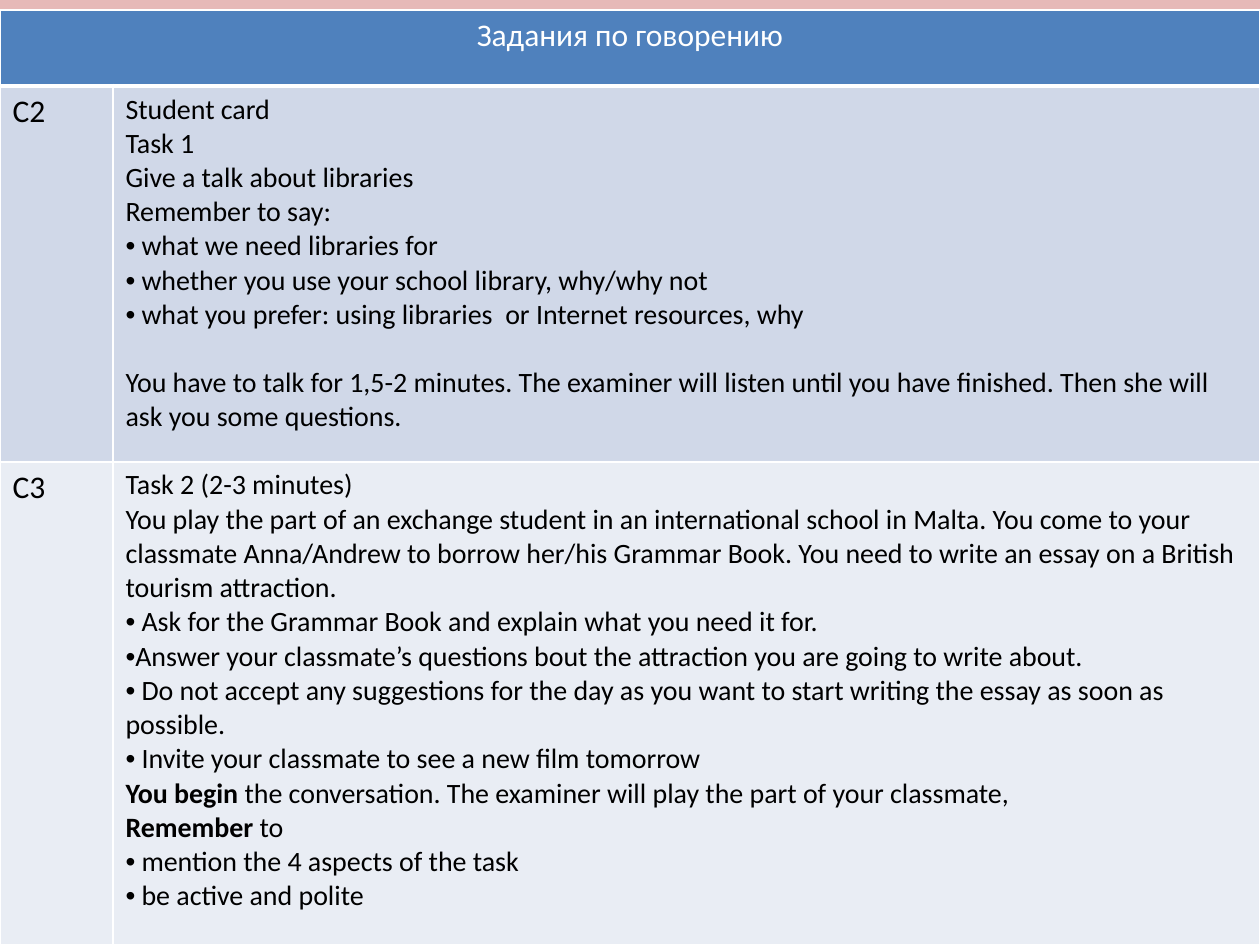
from dataclasses import dataclass

from lxml.etree import SubElement
from pptx import Presentation
from pptx.dml.color import RGBColor
from pptx.enum.text import PP_ALIGN as Align
from pptx.oxml.ns import qn
from pptx.util import Emu, Pt

EMU_PER_PX = 914400 / 126


@dataclass(frozen=True)
class Theme:
    font: str = "Calibri"
    background: str = "E6B9B8"
    header_fill: str = "4F81BD"
    odd_fill: str = "D0D8E8"
    even_fill: str = "E9EDF4"
    border: str = "FFFFFF"
    header_text: str = "FFFFFF"
    body_text: str = "000000"
    heading_size: int = 18
    body_size: int = 16
    paragraph_gap: float = 19.5
    thin_line: int = 1
    thick_line: int = 3


def px(length):
    return Emu(round(length * EMU_PER_PX))


def write_text(paragraph, text, font, size, color, lead="", align=Align.LEFT, gap=0):
    paragraph.alignment = align
    paragraph.space_before = Pt(gap)
    if text.startswith("•"):
        text = text[1:]
        properties = paragraph._p.get_or_add_pPr()
        properties.set("marL", "0")
        properties.set("indent", "0")
        SubElement(properties, qn("a:buFont")).set("typeface", "Arial")
        SubElement(properties, qn("a:buChar")).set("char", "•")
    for part, bold in ((lead, True), (text, False)):
        if part:
            run = paragraph.add_run()
            run.text = part
            run.font.name = font
            run.font.size = Pt(size)
            run.font.bold = bold
            run.font.color.rgb = RGBColor.from_string(color)


class SlideBuilder:
    def __init__(self, slide, theme):
        self.slide = slide
        self.theme = theme

    def background(self):
        fill = self.slide.background.fill
        fill.solid()
        fill.fore_color.rgb = RGBColor.from_string(self.theme.background)

    def table(self, left, top, widths, heights):
        frame = self.slide.shapes.add_table(
            len(heights), len(widths), px(left), px(top), px(sum(widths)), px(sum(heights))
        )
        table = frame.table
        table.first_row = False
        table.horz_banding = False
        for column, width in zip(table.columns, widths):
            column.width = px(width)
        for row, height in zip(table.rows, heights):
            row.height = px(height)
        return table

    def cell(self, cell, fill, thick=""):
        properties = cell._tc.get_or_add_tcPr()
        for side in "LRTB":
            width = self.theme.thick_line if side == thick else self.theme.thin_line
            line = SubElement(properties, qn(f"a:ln{side}"), w=str(Pt(width)))
            solid = SubElement(line, qn("a:solidFill"))
            SubElement(solid, qn("a:srgbClr"), val=self.theme.border)
        cell.fill.solid()
        cell.fill.fore_color.rgb = RGBColor.from_string(fill)

    def text(self, cell, lines, **style):
        frame = cell.text_frame
        for index, (text, extra) in enumerate(lines):
            paragraph = frame.add_paragraph() if index else frame.paragraphs[0]
            write_text(paragraph, text, self.theme.font, **style, **extra)


def plain(*texts):
    return [(text, {}) for text in texts]


def main():
    theme = Theme()
    presentation = Presentation()
    presentation.slide_width = px(1260)
    presentation.slide_height = px(945)
    slide = presentation.slides.add_slide(presentation.slide_layouts[6])
    builder = SlideBuilder(slide, theme)
    builder.background()

    library_task = plain(
        "Student card",
        "Task 1",
        "Give a talk about libraries",
        "Remember to say:",
        "• what we need libraries for",
        "• whether you use your school library, why/why not",
        "• what you prefer: using libraries  or Internet resources, why",
    ) + [
        (
            "You have to talk for 1,5-2 minutes. The examiner will listen until you have "
            "finished. Then she will ask you some questions.",
            {"gap": theme.paragraph_gap},
        )
    ]
    dialogue_task = plain(
        "Task 2 (2-3 minutes)",
        "You play the part of an exchange student in an international school in Malta. "
        "You come to your classmate Anna/Andrew to borrow her/his Grammar Book. "
        "You need to write an essay on a British tourism attraction.",
        "• Ask for the Grammar Book and explain what you need it for.",
        "•Answer your classmate’s questions bout the attraction you are going to write about.",
        "• Do not accept any suggestions for the day as you want to start writing "
        "the essay as soon as possible.",
        "• Invite your classmate to see a new film tomorrow",
    ) + [
        (
            "the conversation. The examiner will play the part of your classmate,",
            {"lead": "You begin "},
        ),
        (" to", {"lead": "Remember"}),
    ] + plain("• mention the 4 aspects of the task", "• be active and polite")

    table = builder.table(0, 10, (113, 1147), (76, 376, 483))
    header = table.cell(0, 0)
    header.merge(table.cell(0, 1))
    for column in range(2):
        builder.cell(table.cell(0, column), theme.header_fill, thick="B")
    builder.text(
        header,
        plain("Задания по говорению"),
        size=theme.heading_size,
        color=theme.header_text,
        align=Align.CENTER,
    )

    tasks = (
        ("С2", library_task, theme.odd_fill, "T"),
        ("C3", dialogue_task, theme.even_fill, ""),
    )
    for row, (code, lines, fill, thick) in enumerate(tasks, start=1):
        contents = ((plain(code), theme.heading_size), (lines, theme.body_size))
        for column, (content, size) in enumerate(contents):
            cell = table.cell(row, column)
            builder.cell(cell, fill, thick)
            builder.text(cell, content, size=size, color=theme.body_text)

    presentation.save("out.pptx")


if __name__ == "__main__":
    main()
